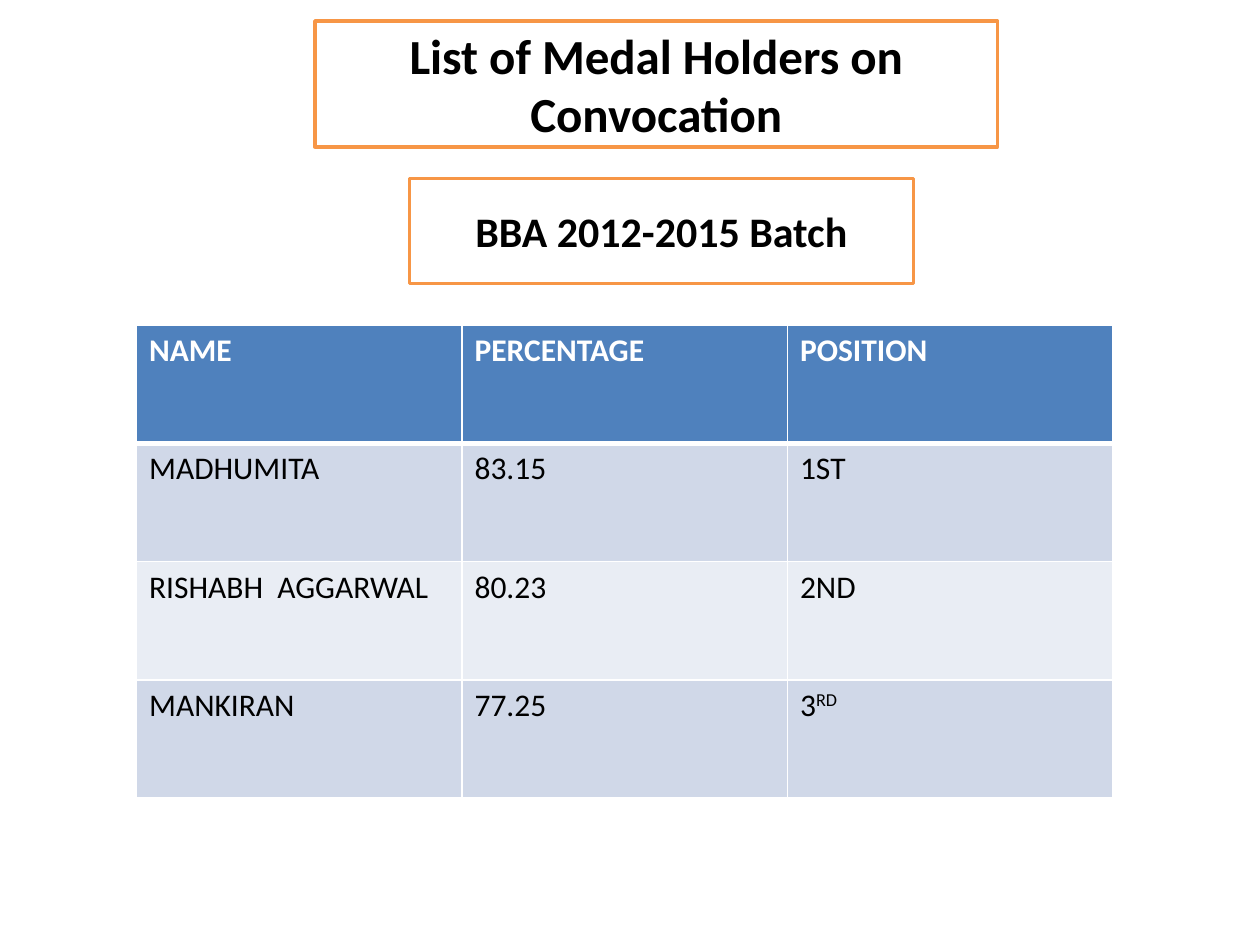
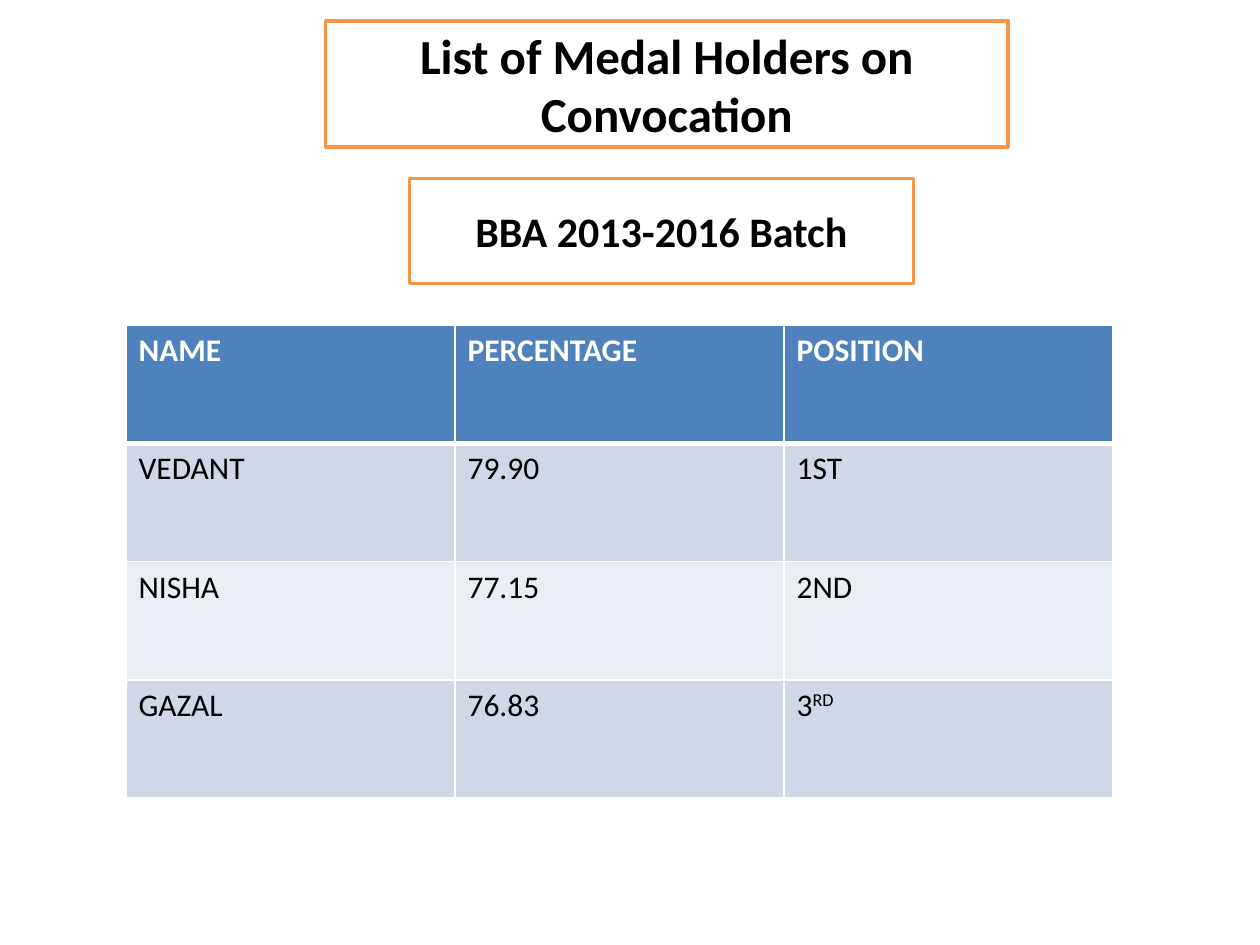
"""Build the medal-holder slides, one for each BBA batch."""
from dataclasses import dataclass
from typing import Any

from lxml.etree import SubElement
from pptx import Presentation
from pptx.dml.color import RGBColor
from pptx.enum.shapes import MSO_SHAPE
from pptx.enum.text import MSO_ANCHOR, PP_ALIGN
from pptx.oxml.ns import qn
from pptx.util import Inches, Pt

UNIT = Inches(10) // 120
WHITE, BLACK, ORANGE = "FFFFFF", "000000", "F79646"
HEADER_BLUE, BANDS = "4F81BD", ("D0D8E8", "E9EDF4")
TITLE = "List of Medal Holders on Convocation"
HEADINGS = ("NAME", "PERCENTAGE", "POSITION")
RANKS = (("1ST", ""), ("2ND", ""), ("3", "RD"))


@dataclass(frozen=True)
class Area:
    """A rectangle on the 120 by 90 slide grid."""
    column: int
    row: int
    columns: int
    rows: int

    def box(self) -> tuple[int, ...]:
        """Return left, top, width and height in EMU."""
        return tuple(n * UNIT for n in (self.column, self.row, self.columns, self.rows))


@dataclass(frozen=True)
class Batch:
    """One batch, its medal holders in order and its layout."""
    years: str
    medalists: tuple[tuple[str, str], ...]
    title_area: Area
    table_area: Area


BATCH_AREA = Area(39, 17, 48, 10)
BATCHES = (
    Batch("2012-2015", (("MADHUMITA", "83.15"), ("RISHABH  AGGARWAL", "80.23"), ("MANKIRAN", "77.25")),
          Area(30, 2, 65, 12), Area(13, 31, 93, 45)),
    Batch("2013-2016", (("VEDANT", "79.90"), ("NISHA", "77.15"), ("GAZAL", "76.83")),
          Area(31, 2, 65, 12), Area(12, 31, 94, 45)),
)


def rgb(code: str) -> RGBColor:
    """Turn a hex string into a colour."""
    return RGBColor.from_string(code)


def style(font: Any, color: str, **values: Any) -> None:
    """Apply a colour and format values to a font."""
    font.color.rgb = rgb(color)
    for key, value in ({"name": "Calibri"} | values).items():
        setattr(font, key, value)


def add_plate(slide: Any, area: Area, wording: str, size: int) -> None:
    """Draw an orange-framed heading."""
    plate = slide.shapes.add_shape(MSO_SHAPE.RECTANGLE, *area.box())
    plate.shadow.inherit = False
    plate.fill.solid()
    plate.fill.fore_color.rgb = rgb(WHITE)
    plate.line.color.rgb = rgb(ORANGE)
    plate.line.width = Pt(2)
    plate.text_frame.vertical_anchor = MSO_ANCHOR.MIDDLE
    heading = plate.text_frame.paragraphs[0]
    heading.alignment = PP_ALIGN.CENTER
    run = heading.add_run()
    run.text = wording
    style(run.font, BLACK, size=Pt(size), bold=True)


def add_borders(cell: Any, row: int) -> None:
    """Give a cell white borders, thicker beneath the header."""
    properties = cell._tc.get_or_add_tcPr()
    widths = {"L": 1, "R": 1, "T": 3 if row == 1 else 1, "B": 3 if row == 0 else 1}
    for side, width in widths.items():
        border = SubElement(properties, qn(f"a:ln{side}"), w=str(Pt(width)))
        SubElement(SubElement(border, qn("a:solidFill")), qn("a:srgbClr"), val=WHITE)


def fill_cell(cell: Any, row: int, wording: str, suffix: str = "") -> None:
    """Write and colour one table cell, with an optional superscript."""
    is_header = row == 0
    add_borders(cell, row)
    cell.fill.solid()
    cell.fill.fore_color.rgb = rgb(HEADER_BLUE if is_header else BANDS[(row - 1) % 2])
    entry = cell.text_frame.paragraphs[0]
    for part in filter(None, (wording, suffix)):
        run = entry.add_run()
        run.text = part
        style(run.font, WHITE if is_header else BLACK, size=Pt(18), bold=is_header)
    if suffix:
        run._r.get_or_add_rPr().set("baseline", "30000")


def add_results(slide: Any, batch: Batch) -> None:
    """Draw the table of medal holders."""
    rows = [[(heading,) for heading in HEADINGS]]
    rows += [[(name,), (score,), rank] for (name, score), rank in zip(batch.medalists, RANKS)]
    results = slide.shapes.add_table(len(rows), len(HEADINGS), *batch.table_area.box()).table
    for row, entries in enumerate(rows):
        for column, entry in enumerate(entries):
            fill_cell(results.cell(row, column), row, *entry)


def main() -> None:
    """Build and save the presentation."""
    deck = Presentation()
    deck.slide_width, deck.slide_height = 120 * UNIT, 90 * UNIT
    for batch in BATCHES:
        slide = deck.slides.add_slide(deck.slide_layouts[6])
        add_results(slide, batch)
        add_plate(slide, BATCH_AREA, f"BBA {batch.years} Batch", 24)
        add_plate(slide, batch.title_area, TITLE, 28)
    deck.save("out.pptx")


if __name__ == "__main__":
    main()
